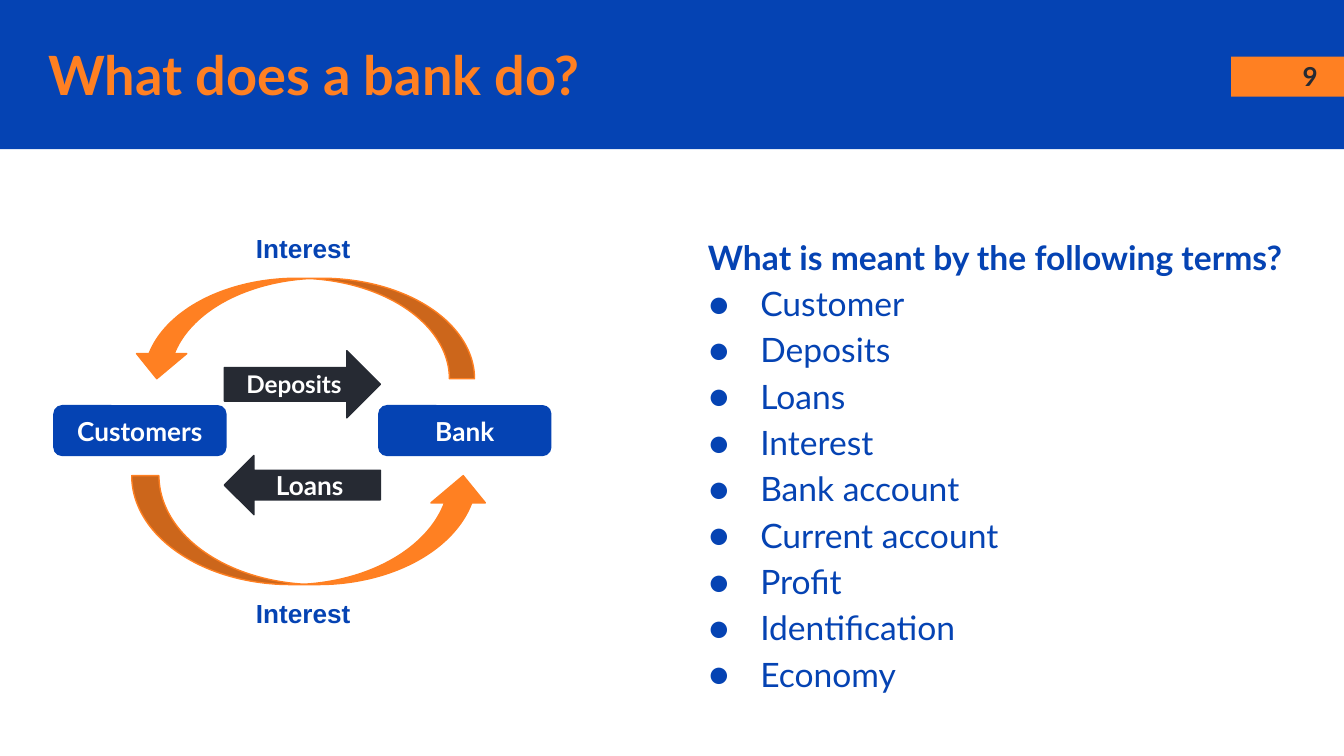
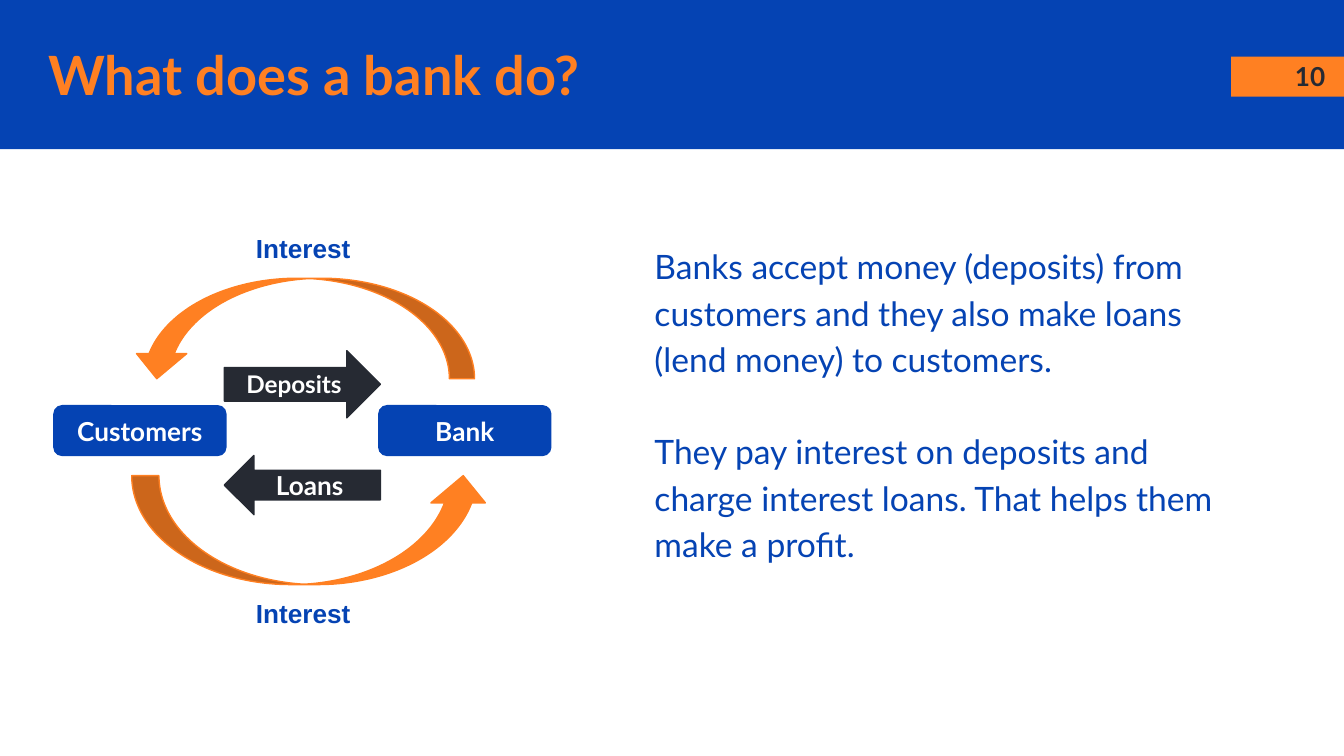
from dataclasses import dataclass

from pptx import Presentation
from pptx.dml.color import RGBColor
from pptx.enum.shapes import MSO_SHAPE
from pptx.enum.text import MSO_ANCHOR, MSO_AUTO_SIZE, PP_ALIGN
from pptx.oxml.ns import qn
from pptx.util import Cm, Pt
from lxml.etree import SubElement


@dataclass(frozen=True)
class Theme:
    blue: str = "0543B3"
    orange: str = "FF8022"
    dark: str = "262A33"
    white: str = "FFFFFF"
    font: str = "Lato"
    caption_font: str = "Arial"
    title_size: float = 29
    body_size: float = 18
    label_size: float = 14
    small_label_size: float = 13
    outline: float = 0.75
    inset: float = 0.25
    body_indent: float = 0.28
    bullet_indent: float = 1.27
    bullet_hanging: float = 0.97
    line_spacing: float = 1.15
    paragraph_gap: float = 24.6


THEME = Theme()

TERMS = ["Customer", "Deposits", "Loans", "Interest", "Bank account",
         "Current account", "Profit", "Identification", "Economy"]
EXPLANATION = [
    "Banks accept money (deposits) from customers and they also make loans "
    "(lend money) to customers.",
    "They pay interest on deposits and charge interest loans. That helps them "
    "make a profit.",
]


# Basic elements; every area is left, top, width, height in centimetres
def add_shape(shapes, kind, area, fill, outlined=False):
    shape = shapes.add_shape(kind, *map(Cm, area))
    shape.shadow.inherit = False
    shape.fill.solid()
    shape.fill.fore_color.rgb = RGBColor.from_string(fill)
    if outlined:
        shape.line.color.rgb = RGBColor.from_string(fill)
        shape.line.width = Pt(THEME.outline)
    else:
        shape.line.fill.background()
    return shape


def set_frame(shape, anchor=MSO_ANCHOR.TOP, grow=False):
    frame = shape.text_frame
    frame.word_wrap = True
    frame.vertical_anchor = anchor
    frame.auto_size = MSO_AUTO_SIZE.SHAPE_TO_FIT_TEXT if grow else MSO_AUTO_SIZE.NONE
    frame.margin_left = frame.margin_right = Cm(THEME.inset)
    frame.margin_top = frame.margin_bottom = Cm(THEME.inset)
    return frame


def style_paragraph(paragraph, size, color, bold=False, font=THEME.font,
                    align=PP_ALIGN.LEFT):
    paragraph.alignment = align
    for run in paragraph.runs:
        run.font.name = font
        run.font.size = Pt(size)
        run.font.bold = bold
        run.font.color.rgb = RGBColor.from_string(color)


def add_label(shape, text, size, color, font=THEME.font, align=PP_ALIGN.CENTER,
              anchor=MSO_ANCHOR.MIDDLE, grow=False):
    frame = set_frame(shape, anchor, grow)
    frame.text = text
    style_paragraph(frame.paragraphs[0], size, color, True, font, align)


def indent_paragraph(paragraph, left, hanging=0):
    properties = paragraph._p.get_or_add_pPr()
    properties.set("marL", str(Cm(left)))
    properties.set("indent", str(-Cm(hanging)))
    return properties


def add_bullet(paragraph):
    properties = indent_paragraph(paragraph, THEME.bullet_indent, THEME.bullet_hanging)
    color = SubElement(properties, qn("a:buClr"))
    SubElement(color, qn("a:srgbClr")).set("val", THEME.blue)
    SubElement(properties, qn("a:buFont")).set("typeface", THEME.font)
    SubElement(properties, qn("a:buChar")).set("char", "●")


def add_body_paragraph(frame, text, first=False, bullet=False, bold=False):
    paragraph = frame.paragraphs[0] if first else frame.add_paragraph()
    paragraph.text = text
    if bullet:
        add_bullet(paragraph)
    else:
        indent_paragraph(paragraph, THEME.body_indent)
    paragraph.line_spacing = THEME.line_spacing
    style_paragraph(paragraph, THEME.body_size, THEME.blue, bold)
    return paragraph


# Parts shared by the slides
def add_bank_slide(presentation, number):
    slide = presentation.slides.add_slide(presentation.slide_layouts[6])
    shapes = slide.shapes
    add_shape(shapes, MSO_SHAPE.RECTANGLE, (0, 0, 25.4, 2.82), THEME.blue)
    add_shape(shapes, MSO_SHAPE.RECTANGLE, (23.27, 1.07, 2.13, 0.76), THEME.orange)
    title = shapes.add_textbox(Cm(0.66), Cm(0.69), Cm(21.49), Cm(1.42))
    add_label(title, "What does a bank do?", THEME.title_size, THEME.orange,
              align=PP_ALIGN.LEFT)
    number_box = shapes.add_textbox(Cm(24.1), Cm(1.12), Cm(1.32), Cm(0.64))
    add_label(number_box, str(number), THEME.label_size, THEME.dark)
    return slide


def add_interest_arrow(shapes, area, rotation=0):
    arrow = add_shape(shapes, MSO_SHAPE.CURVED_DOWN_ARROW, area, THEME.orange, True)
    arrow.rotation = rotation
    arrow.element.spPr.find(qn("a:xfrm")).set("flipH", "1")


def add_party(shapes, name, left):
    box = add_shape(shapes, MSO_SHAPE.ROUNDED_RECTANGLE, (left, 7.67, 3.25, 0.94),
                    THEME.blue, True)
    add_label(box, name, THEME.label_size, THEME.white)


def add_money_arrow(shapes, kind, text, top, height, size):
    arrow = add_shape(shapes, kind, (4.24, top, 2.95, height), THEME.dark, True)
    add_label(arrow, text, size, THEME.white)


def add_money_cycle(shapes):
    add_party(shapes, "Customers", 1.02)
    add_interest_arrow(shapes, (2.49, 5.26, 6.48, 1.9))
    add_interest_arrow(shapes, (2.49, 8.99, 6.78, 2.06), rotation=180)
    add_party(shapes, "Bank", 7.16)
    add_money_arrow(shapes, MSO_SHAPE.RIGHT_ARROW, "Deposits", 6.63, 1.27,
                    THEME.small_label_size)
    add_money_arrow(shapes, MSO_SHAPE.LEFT_ARROW, "Loans", 8.61, 1.12,
                    THEME.label_size)
    for top in (4.14, 11.05):
        caption = shapes.add_textbox(Cm(2.49), Cm(top), Cm(6.48), Cm(1.12))
        add_label(caption, "Interest", THEME.label_size, THEME.blue,
                  THEME.caption_font, anchor=MSO_ANCHOR.TOP, grow=True)


# Slides
def build_terms_slide(presentation):
    slide = add_bank_slide(presentation, 9)
    box = slide.shapes.add_textbox(Cm(12.85), Cm(4.11), Cm(12.19), Cm(9.25))
    frame = set_frame(box, grow=True)
    add_body_paragraph(frame, "What is meant by the following terms?",
                       first=True, bold=True)
    for term in TERMS:
        add_body_paragraph(frame, term, bullet=True)
    add_money_cycle(slide.shapes)


def build_explanation_slide(presentation):
    slide = add_bank_slide(presentation, 10)
    box = add_shape(slide.shapes, MSO_SHAPE.RECTANGLE, (11.84, 4.29, 11.76, 6.6),
                    THEME.white)
    frame = set_frame(box, grow=True)
    for index, text in enumerate(EXPLANATION):
        paragraph = add_body_paragraph(frame, text, first=index == 0)
        if index:
            paragraph.space_before = Pt(THEME.paragraph_gap)
    add_money_cycle(slide.shapes.add_group_shape().shapes)


def main():
    presentation = Presentation()
    presentation.slide_width = Cm(25.4)
    presentation.slide_height = Cm(14.29)
    build_terms_slide(presentation)
    build_explanation_slide(presentation)
    presentation.save("out.pptx")


if __name__ == "__main__":
    main()
